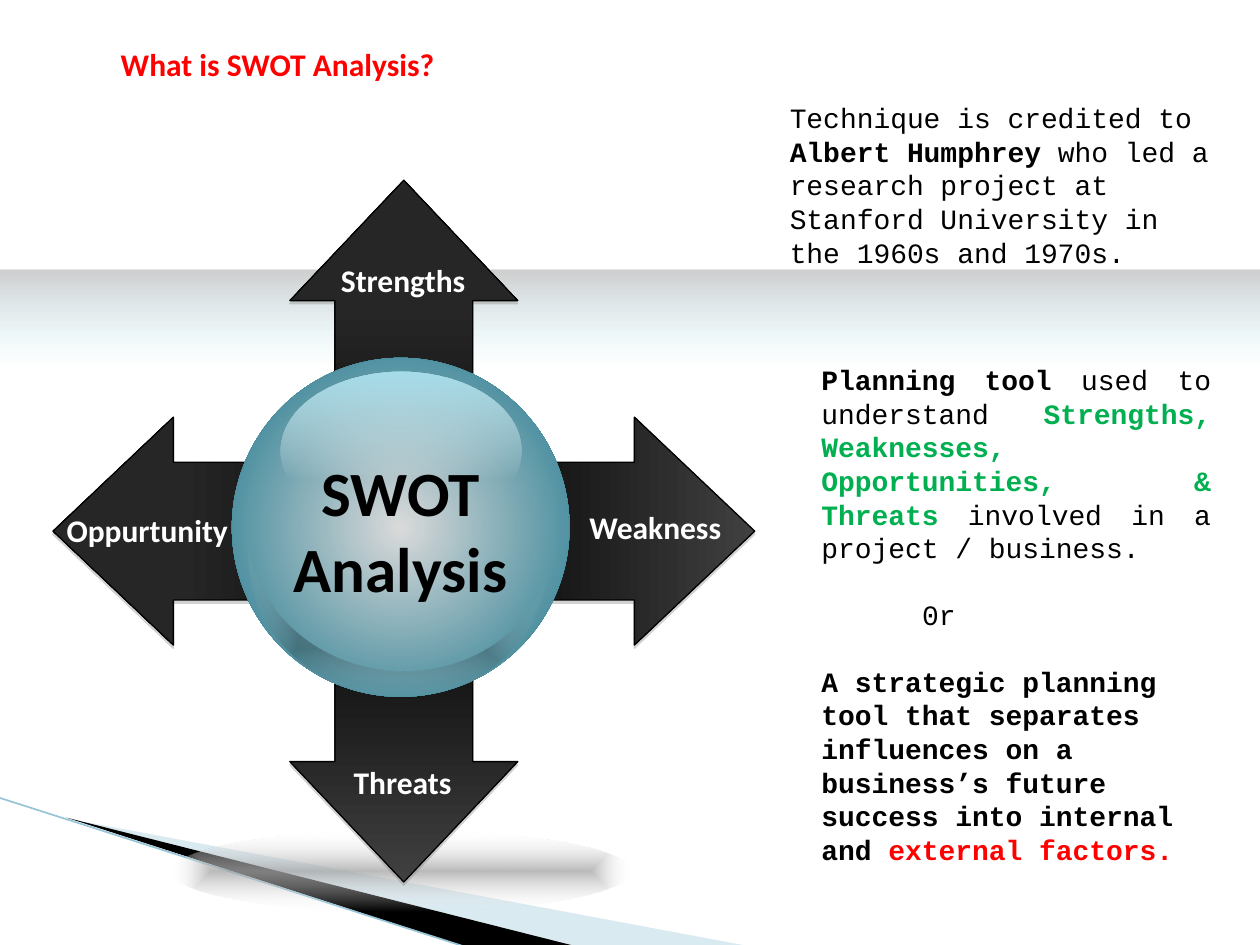
from pptx import Presentation
from pptx.dml.color import RGBColor
from pptx.enum.shapes import MSO_CONNECTOR, MSO_SHAPE
from pptx.enum.text import MSO_AUTO_SIZE, PP_ALIGN
from pptx.oxml import parse_xml
from pptx.oxml.ns import nsdecls
from pptx.util import Inches, Pt

BLACK = RGBColor(0x00, 0x00, 0x00)
WHITE = RGBColor(0xFF, 0xFF, 0xFF)
RED = RGBColor(0xFF, 0x00, 0x00)
GREEN = RGBColor(0x00, 0xB0, 0x50)
PALE = RGBColor(0xA0, 0xCB, 0xDC)
SKY = RGBColor(0x97, 0xC5, 0xD8)
AQUA = RGBColor(0x17, 0xAF, 0xD5)
TEAL = RGBColor(0x22, 0x7A, 0x8F)
ICE = RGBColor(0xA6, 0xDD, 0xEA)
INK = RGBColor(0x0D, 0x0D, 0x0D)
COAL = RGBColor(0x26, 0x26, 0x26)
SLATE = RGBColor(0x40, 0x40, 0x40)
GREY = RGBColor(0xA6, 0xA6, 0xA6)
SILVER = RGBColor(0xDA, 0xDA, 0xDA)

LABEL = {"name": "Calibri", "size": Pt(18), "bold": True}
HUB = {**LABEL, "size": Pt(36)}
BODY = {"name": "Courier New", "size": Pt(16), "bold": False}
STRONG = {**BODY, "bold": True}
CENTER = {"alignment": PP_ALIGN.CENTER}
EVEN = {"alignment": PP_ALIGN.JUSTIFY}
GAP = {"space_before": Pt(19)}


class Deck:
    """Draws styled elements on the current slide."""

    def __init__(self, show):
        self.slide = show.slides.add_slide(show.slide_layouts[6])
        self.shapes = self.slide.shapes

    def fade(self, shape, stops, angle=None, path="shape"):
        marks = "".join(
            f'<a:gs pos="{pos * 1000}"><a:srgbClr val="{tone}">'
            f'<a:alpha val="{alpha * 1000}"/></a:srgbClr></a:gs>'
            for pos, tone, alpha in stops)
        if angle is None:
            way = (f'<a:path path="{path}"><a:fillToRect l="50000" t="50000" '
                   'r="50000" b="50000"/></a:path>')
        else:
            way = f'<a:lin ang="{angle * 60000}" scaled="0"/>'
        fill = parse_xml(f'<a:gradFill {nsdecls("a")} rotWithShape="1">'
                         f'<a:gsLst>{marks}</a:gsLst>{way}</a:gradFill>')
        shape._element.spPr.prstGeom.addnext(fill)

    def shape(self, kind, box, stops, turn=0, adjust=(), **way):
        item = self.shapes.add_shape(kind, *map(Inches, box))
        item.shadow.inherit = False
        item.rotation = turn
        for spot, value in enumerate(adjust):
            item.adjustments[spot] = value
        item.line.fill.background()
        self.fade(item, stops, **way)
        return item

    def arrow(self, turn):
        stops = [(0, SLATE, 100), (44, BLACK, 100), (82, COAL, 100), (100, COAL, 100)]
        item = self.shape(MSO_SHAPE.LEFT_RIGHT_ARROW, (0.42, 3.31, 5.57, 1.81),
                          stops, turn, (0.604, 0.528), angle=0)
        item.line.color.rgb = BLACK
        item.line.width = Pt(0.75)
        item._element.spPr.find("{*}effectLst").append(parse_xml(
            f'<a:outerShdw {nsdecls("a")} blurRad="0" dist="{Pt(1.8)}" dir="5400000" '
            'rotWithShape="0"><a:srgbClr val="808080"><a:alpha val="35000"/>'
            '</a:srgbClr></a:outerShdw>'))

    def wedge(self, points, color, alpha=100):
        first, *rest = [tuple(map(Inches, point)) for point in points]
        pen = self.shapes.build_freeform(*first)
        pen.add_line_segments(rest)
        item = pen.convert_to_shape()
        item.shadow.inherit = False
        item.fill.solid()
        item.fill.fore_color.rgb = color
        item.line.fill.background()
        tone = item._element.spPr.find("{*}solidFill/{*}srgbClr")
        tone.append(parse_xml(f'<a:alpha {nsdecls("a")} val="{alpha * 1000}"/>'))

    def line(self, start, end, color, width):
        item = self.shapes.add_connector(
            MSO_CONNECTOR.STRAIGHT, *map(Inches, start + end))
        item.line.color.rgb = color
        item.line.width = Pt(width)
        item._element.spPr.append(parse_xml(f'<a:effectLst {nsdecls("a")}/>'))

    def text(self, box, *paras):
        frame = self.shapes.add_textbox(*map(Inches, box)).text_frame
        frame.word_wrap = True
        frame.auto_size = MSO_AUTO_SIZE.SHAPE_TO_FIT_TEXT
        for count, (style, *runs) in enumerate(paras):
            para = frame.add_paragraph() if count else frame.paragraphs[0]
            for key, value in style.items():
                if key == "indent":
                    para._p.get_or_add_pPr().set("marL", str(value))
                else:
                    setattr(para, key, value)
            for words, look, color in runs:
                run = para.add_run()
                run.text = words
                for key, value in look.items():
                    setattr(run.font, key, value)
                run.font.color.rgb = color


def main():
    show = Presentation()
    show.slide_width, show.slide_height = Inches(10), Inches(7.5)
    deck = Deck(show)

    deck.wedge([(0.55, 6.5), (5.95, 7.51), (4.56, 7.51)], PALE, 40)
    deck.wedge([(0.53, 6.49), (4.57, 7.51), (3.72, 7.52)], BLACK)
    deck.line((-0.01, 6.33), (3.71, 7.52), SKY, 0.95)
    deck.shape(MSO_SHAPE.RECTANGLE, (0, 2.14, 10, 1.32),
               [(0, INK, 20), (57, AQUA, 0), (100, AQUA, 0)], angle=90)
    deck.shape(MSO_SHAPE.OVAL, (1.36, 6.59, 3.64, 0.64),
               [(0, GREY, 77), (100, WHITE, 0)])
    for turn in (270, 180):
        deck.arrow(turn)

    deck.shape(MSO_SHAPE.OVAL, (1.84, 2.84, 2.68, 2.69),
               [(0, SILVER, 100), (95, TEAL, 100), (100, TEAL, 100)], path="circle")
    deck.shape(MSO_SHAPE.OVAL, (2.23, 2.95, 1.91, 1.25),
               [(0, ICE, 100), (68, WHITE, 0), (100, WHITE, 0)], angle=90)
    deck.shape(MSO_SHAPE.MOON, (2.57, 3.8, 1.07, 2.37),
               [(0, BLACK, 24), (24, BLACK, 24), (100, WHITE, 0)], 275.9, (0.19,))
    deck.text((1.62, 3.55, 3.12, 1.31),
              *[(CENTER, (word, HUB, BLACK)) for word in ("SWOT", "Analysis")])

    for word, left, top, width, style in (
            ("Oppurtunity", 0.43, 4.01, 1.67, {}),
            ("Threats", 2.64, 6.01, 1.11, CENTER),
            ("Strengths", 2.47, 2.02, 1.46, CENTER),
            ("Weakness", 4.58, 3.98, 1.4, {})):
        deck.text((left, top, width, 0.4), (style, (word, LABEL, WHITE)))

    deck.text((6.17, 0.75, 3.54, 1.18), (
        {}, ("Technique is credited to ", BODY, BLACK),
        ("Albert Humphrey", STRONG, BLACK),
        (" who led a research project at Stanford University in the 1960s and 1970s.",
         BODY, BLACK)))
    deck.text(
        (6.42, 2.83, 3.29, 3.6),
        (EVEN, ("Planning tool ", STRONG, BLACK),
         ("used to understand ", BODY, BLACK),
         ("Strengths, Weaknesses, Opportunities, & Threats", STRONG, GREEN),
         (" involved in a project / business.", BODY, BLACK)),
        ({**EVEN, **GAP, "indent": Inches(0.8)}, ("0r", BODY, BLACK)),
        (GAP, ("A strategic planning tool that separates influences on a "
               "business’s future success into internal and ", STRONG, BLACK),
         ("external factors.", STRONG, RED)))
    deck.text((0.86, 0.31, 5.82, 0.5), ({}, ("What is SWOT Analysis?", LABEL, RED)))

    show.save("out.pptx")


if __name__ == "__main__":
    main()
